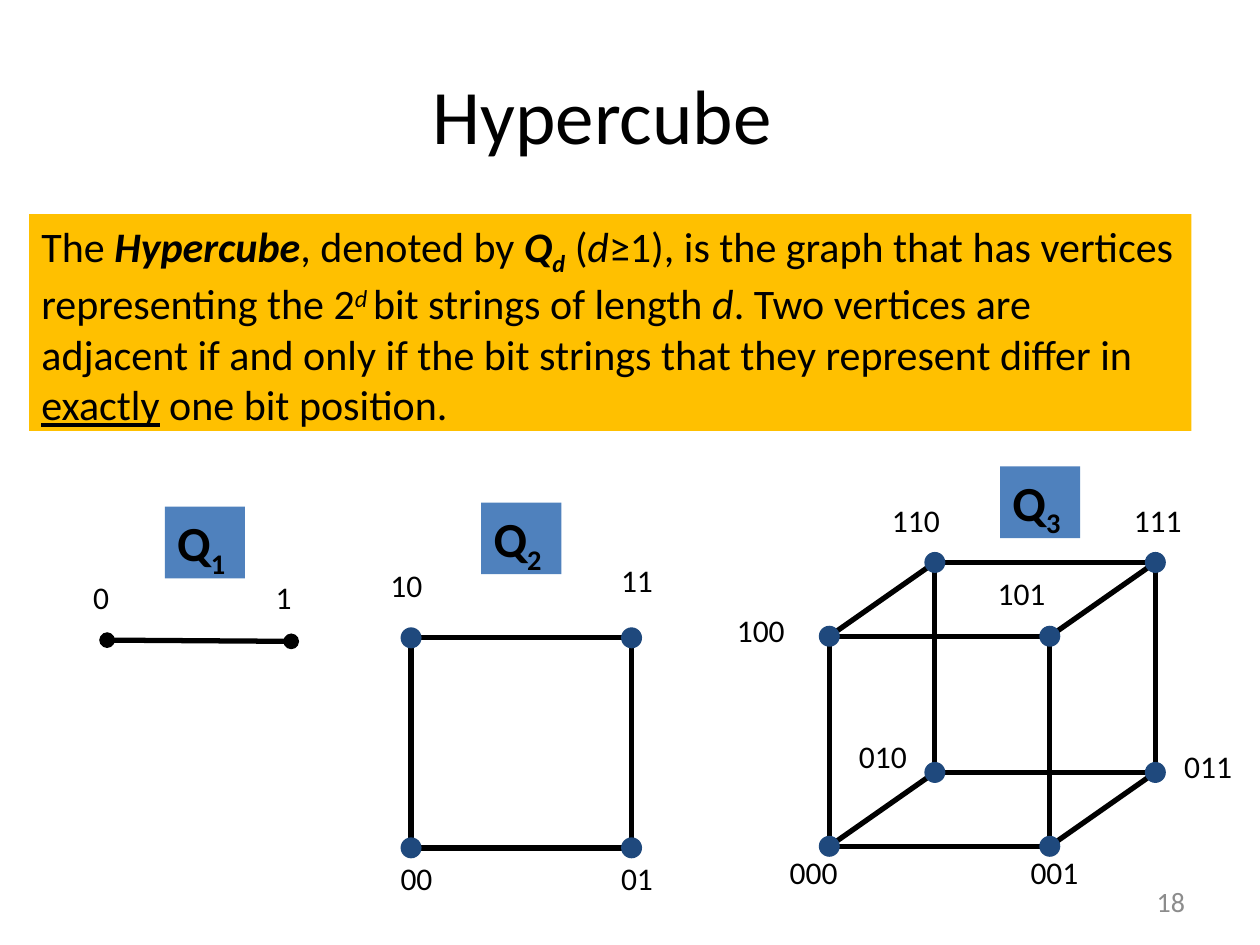
from dataclasses import dataclass
from itertools import combinations

from lxml.etree import SubElement
from pptx import Presentation
from pptx.dml.color import RGBColor
from pptx.enum.shapes import MSO_CONNECTOR as Connector, MSO_SHAPE as Shape
from pptx.enum.text import MSO_ANCHOR as Anchor, PP_ALIGN as Align
from pptx.oxml.ns import qn
from pptx.util import Pt

COLORS = {"text": "000000", "definition": "FFC000", "name": "4F81BD",
          "node": "1F497D", "page": "8C8C8C"}
FONT = "Calibri"
NODE_SIZE = 12
LABEL_HEIGHT = 36
SUBSCRIPT, SUPERSCRIPT = -25000, 30000


@dataclass(frozen=True)
class Span:
    text: str
    bold: bool = False
    italic: bool = False
    underline: bool = False
    baseline: int = 0


@dataclass(frozen=True)
class Cube:
    """A hypercube: steps holds the offset made by each bit, lowest bit first."""
    origin: tuple[float, float]
    steps: tuple[tuple[float, float], ...]
    name_at: tuple[float, float]
    label_width: float
    labels: dict[str, tuple[float, float]]

    @property
    def dimension(self) -> int:
        return len(self.steps)

    def vertex(self, code: int) -> tuple[float, float]:
        active = [step for bit, step in enumerate(self.steps) if code >> bit & 1]
        return (self.origin[0] + sum(dx for dx, _ in active),
                self.origin[1] + sum(dy for _, dy in active))


RIGHT, UP, DEPTH = (126, 0), (0, -120), (60.3, -42.2)
CUBES = [
    Cube((61.2, 365.8), ((105.2, 0.7),), (94.2, 289.5), 26.6,
         {"0": (46.1, 326.9), "1": (150.5, 326.9)}),
    Cube((234.9, 484.5), (RIGHT, UP), (275, 287.2), 38.2,
         {"00": (221.8, 487.4), "01": (347.8, 487.4),
          "10": (216, 319.7), "11": (347.8, 316.8)}),
    Cube((473.9, 483.6), (RIGHT, DEPTH, UP), (571.5, 266.5), 50.4,
         {"000": (444.2, 483.8), "001": (581.8, 483.8),
          "011": (669.6, 423.4), "010": (483.8, 417.6),
          "100": (414, 345.6), "110": (502.6, 283),
          "111": (640.8, 283), "101": (563, 324.7)}),
]

DEFINITION = [
    Span("The "), Span("Hypercube", bold=True, italic=True),
    Span(", denoted by "), Span("Q", bold=True, italic=True),
    Span("d", bold=True, italic=True, baseline=SUBSCRIPT),
    Span(" ("), Span("d", italic=True),
    Span("≥1), is the graph that has vertices representing the 2"),
    Span("d ", italic=True, baseline=SUPERSCRIPT),
    Span("bit strings of length "), Span("d", italic=True),
    Span(". Two vertices are adjacent if and only if the bit strings "
         "that they represent differ in "),
    Span("exactly", underline=True), Span(" one bit position."),
]


def rgb(role: str) -> RGBColor:
    return RGBColor.from_string(COLORS[role])


def write(frame, spans: list[Span], size: float, color: str = "text",
          align=Align.LEFT, anchor=Anchor.TOP) -> None:
    frame.word_wrap = True
    frame.vertical_anchor = anchor
    paragraph = frame.paragraphs[0]
    paragraph.alignment = align
    for span in spans:
        run = paragraph.add_run()
        run.text = span.text
        font = run.font
        font.name, font.size = FONT, Pt(size)
        font.color.rgb = rgb(color)
        font.bold, font.italic, font.underline = span.bold, span.italic, span.underline
        if span.baseline:
            run._r.get_or_add_rPr().set("baseline", str(span.baseline))


def add_filled(slide, kind, left: float, top: float, width: float,
               height: float, color: str):
    shape = slide.shapes.add_shape(kind, Pt(left), Pt(top), Pt(width), Pt(height))
    shape.shadow.inherit = False
    shape.fill.solid()
    shape.fill.fore_color.rgb = rgb(color)
    shape.line.fill.background()
    return shape


def add_text(slide, left: float, top: float, width: float, height: float,
             text: str, size: float, **style) -> None:
    box = slide.shapes.add_textbox(Pt(left), Pt(top), Pt(width), Pt(height))
    write(box.text_frame, [Span(text)], size, **style)


def add_edge(slide, start: tuple[float, float], end: tuple[float, float],
             oval_ends: bool) -> None:
    edge = slide.shapes.add_connector(Connector.STRAIGHT, *map(Pt, start + end))
    edge.line.color.rgb = rgb("text")
    edge.line.width = Pt(3)
    if oval_ends:
        line = edge.line._get_or_add_ln()
        for tag in ("a:headEnd", "a:tailEnd"):
            SubElement(line, qn(tag), type="oval")
    SubElement(edge._element.spPr, qn("a:effectLst"))


def add_cube(slide, cube: Cube) -> None:
    codes = range(2 ** cube.dimension)
    is_segment = cube.dimension == 1
    for a, b in combinations(codes, 2):
        if (a ^ b).bit_count() == 1:
            add_edge(slide, cube.vertex(a), cube.vertex(b), oval_ends=is_segment)
    if not is_segment:
        for code in codes:
            x, y = cube.vertex(code)
            add_filled(slide, Shape.OVAL, x - NODE_SIZE / 2, y - NODE_SIZE / 2,
                       NODE_SIZE, NODE_SIZE, "node")
    name = add_filled(slide, Shape.RECTANGLE, *cube.name_at, 45.8, 41, "name")
    write(name.text_frame, [Span("Q", bold=True),
                            Span(str(cube.dimension), bold=True, baseline=SUBSCRIPT)], 28)
    for bits, (left, top) in cube.labels.items():
        add_text(slide, left, top, cube.label_width, LABEL_HEIGHT, bits, 18)


def main() -> None:
    deck = Presentation()
    deck.slide_width, deck.slide_height = Pt(720), Pt(540)
    slide = deck.slides.add_slide(deck.slide_layouts.get_by_name("Title Only"))

    title = slide.shapes.title
    title.left, title.top, title.width, title.height = map(Pt, (38.2, 33.8, 612, 62.6))
    write(title.text_frame, [Span("Hypercube")], 44,
          align=Align.CENTER, anchor=Anchor.MIDDLE)

    definition = add_filled(slide, Shape.RECTANGLE, 16.6, 122.4, 664.2, 123.8, "definition")
    write(definition.text_frame, DEFINITION, 24)

    for cube in CUBES:
        add_cube(slide, cube)

    add_text(slide, 516.2, 500.4, 168, 28.8, "18", 16, color="page",
             align=Align.RIGHT, anchor=Anchor.MIDDLE)
    deck.save("out.pptx")


if __name__ == "__main__":
    main()
